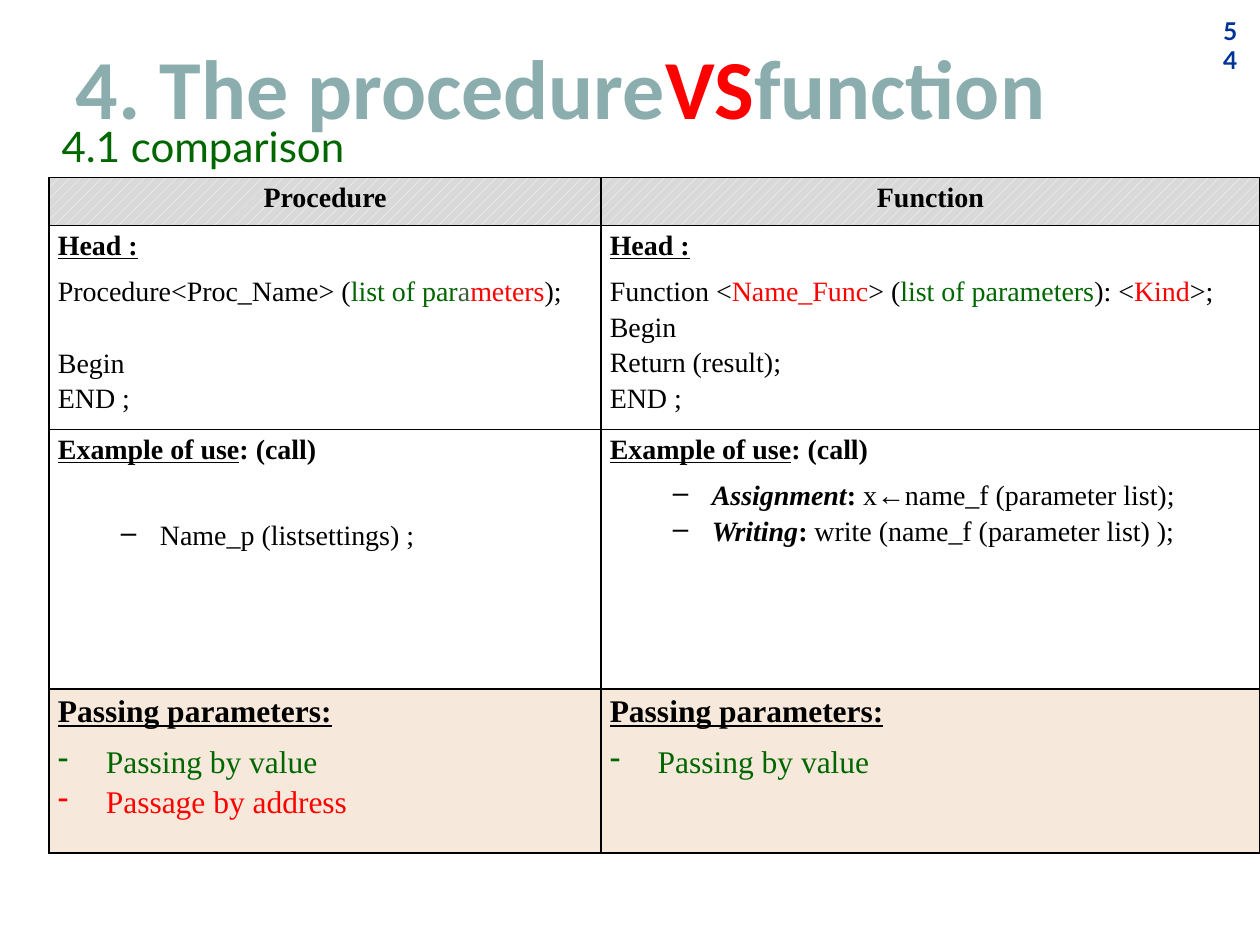
from dataclasses import dataclass

from lxml import etree
from pptx import Presentation
from pptx.dml.color import RGBColor
from pptx.enum import dml, text
from pptx.oxml import ns
from pptx.util import Inches, Pt

BLACK = RGBColor(0x00, 0x00, 0x00)
WHITE = RGBColor(0xFF, 0xFF, 0xFF)
RED = RGBColor(0xFF, 0x00, 0x00)
GREEN = RGBColor(0x00, 0x66, 0x00)
GREY_GREEN = RGBColor(0x43, 0x5E, 0x40)
TEAL = RGBColor(0x8C, 0xAD, 0xAE)
NAVY = RGBColor(0x00, 0x33, 0x99)
GREY = RGBColor(0xD9, 0xD9, 0xD9)
CREAM = RGBColor(0xF6, 0xE9, 0xDB)

SERIF = "Times New Roman"
COLUMN_WIDTHS = (4.38, 5.23)
ROW_HEIGHTS = (0.38, 1.62, 2.06, 1.3)


@dataclass
class Line:
    runs: list
    size: int = 16
    font_color: RGBColor = BLACK
    before: float = 0
    after: float = 0
    centred: bool = False
    bullet: str = ""
    level: int = 0
    margin: float = 0
    indent: float = 0


def heading(label, rest="", size=16):
    runs = [(label, "bu", None)]
    if rest:
        runs.append((rest, "b", None))
    return Line(runs, size, after=6)


def plain(words, before=0):
    return Line([(words, "", None)], before=before)


def call_item(runs, before=0):
    return Line(runs, before=before, bullet="–", level=1, margin=0.81, indent=-0.31)


def passing_item(words, font_color):
    return Line([(words, "", None)], 18, font_color, bullet="-", margin=0.38, indent=-0.38)


def column_title(words):
    return [Line([(words, "b", None)], after=6, centred=True)]


def table_content():
    by_value = passing_item("Passing by value", GREEN)
    passing = heading("Passing parameters:", size=18)
    head = heading("Head :")
    example = heading("Example of use", ": (call)")
    procedure_signature = Line([
        ("Procedure<Proc_Name> (", "", None), ("list of par", "", GREEN),
        ("a", "", GREY_GREEN), ("meters", "", RED), (");", "", None)])
    function_signature = Line([
        ("Function <", "", None), ("Name_Func", "", RED), ("> (", "", None),
        ("list of parameters", "", GREEN), ("): <", "", None),
        ("Kind", "", RED), (">;", "", None)])
    assignment = call_item([("Assignment", "bi", None), (": ", "b", None),
                            ("x←name_f (parameter list);", "", None)])
    writing = call_item([("Writing", "bi", None), (":", "b", None),
                         (" write (name_f (parameter list) );", "", None)])
    procedure_call = call_item([("Name_p (listsettings) ;", "", None)], before=23)
    return [
        [column_title("Procedure"), column_title("Function")],
        [[head, procedure_signature, plain("Begin", 20.5), plain("END ;")],
         [head, function_signature, plain("Begin"), plain("Return (result);"), plain("END ;")]],
        [[example, procedure_call], [example, assignment, writing]],
        [[passing, by_value, passing_item("Passage by address", RED)], [passing, by_value]],
    ]


def set_font(paragraph, name, size, font_color, bold=None):
    font = paragraph.font
    font.name = name
    font.size = Pt(size)
    font.color.rgb = font_color
    font.bold = bold


def add_run(paragraph, words, style="", font_color=None):
    run = paragraph.add_run()
    run.text = words
    if "b" in style:
        run.font.bold = True
    if "i" in style:
        run.font.italic = True
    if "u" in style:
        run.font.underline = True
    if font_color is not None:
        run.font.color.rgb = font_color


def add_bullet(paragraph, line):
    properties = paragraph._p.get_or_add_pPr()
    properties.set("marL", str(Inches(line.margin)))
    properties.set("indent", str(Inches(line.indent)))
    etree.SubElement(properties, ns.qn("a:buChar"), char=line.bullet)
    if line.level:
        tabs = etree.SubElement(properties, ns.qn("a:tabLst"))
        etree.SubElement(tabs, ns.qn("a:tab"), pos=str(Inches(0.28)), algn="l")


def write_line(paragraph, line):
    if line.bullet:
        add_bullet(paragraph, line)
    paragraph.level = line.level
    paragraph.line_spacing = 1.15
    paragraph.space_before = Pt(line.before)
    paragraph.space_after = Pt(line.after)
    if line.centred:
        paragraph.alignment = text.PP_ALIGN.CENTER
    set_font(paragraph, SERIF, line.size, line.font_color)
    for run in line.runs:
        add_run(paragraph, *run)


def add_borders(cell):
    properties = cell._tc.get_or_add_tcPr()
    for position, side in enumerate(("lnL", "lnR", "lnT", "lnB")):
        border = etree.Element(ns.qn(f"a:{side}"), w=str(Pt(1)))
        fill = etree.SubElement(border, ns.qn("a:solidFill"))
        etree.SubElement(fill, ns.qn("a:srgbClr"), val=str(BLACK))
        properties.insert(position, border)


def fill_cell(cell, row_index):
    if row_index == 0:
        cell.fill.patterned()
        cell.fill.pattern = dml.MSO_PATTERN.PERCENT_20
        cell.fill.fore_color.rgb = WHITE
        cell.fill.back_color.rgb = GREY
    elif row_index == 3:
        cell.fill.solid()
        cell.fill.fore_color.rgb = CREAM
    else:
        cell.fill.background()


def write_cell(cell, lines, row_index):
    cell.margin_left = cell.margin_right = Inches(0.07)
    cell.margin_top = cell.margin_bottom = 0
    fill_cell(cell, row_index)
    add_borders(cell)
    frame = cell.text_frame
    for index, line in enumerate(lines):
        write_line(frame.add_paragraph() if index else frame.paragraphs[0], line)


def add_comparison(slide):
    table = slide.shapes.add_table(
        len(ROW_HEIGHTS), len(COLUMN_WIDTHS), Inches(0.39), Inches(1.41),
        Inches(sum(COLUMN_WIDTHS)), Inches(sum(ROW_HEIGHTS))).table
    table.first_row = table.horz_banding = False
    for column, width in zip(table.columns, COLUMN_WIDTHS):
        column.width = Inches(width)
    for row_index, row_content in enumerate(table_content()):
        table.rows[row_index].height = Inches(ROW_HEIGHTS[row_index])
        for column_index, lines in enumerate(row_content):
            write_cell(table.cell(row_index, column_index), lines, row_index)


def add_title(slide):
    title = slide.shapes.title
    title.left, title.top = Inches(0.5), Inches(0.23)
    title.width, title.height = Inches(9.19), Inches(0.91)
    title.text_frame.vertical_anchor = text.MSO_ANCHOR.MIDDLE
    paragraph = title.text_frame.paragraphs[0]
    paragraph.alignment = text.PP_ALIGN.LEFT
    set_font(paragraph, "Calibri", 48, TEAL, True)
    for words, font_color in (("4. The procedure", None), ("VS", RED), ("function", None)):
        add_run(paragraph, words, font_color=font_color)


def add_label(slide, words, left, top, width, height, size, font_color, bold=False):
    box = slide.shapes.add_textbox(Inches(left), Inches(top), Inches(width), Inches(height))
    frame = box.text_frame
    frame.word_wrap = True
    frame.vertical_anchor = text.MSO_ANCHOR.MIDDLE
    set_font(frame.paragraphs[0], "Lato", size, font_color, bold)
    add_run(frame.paragraphs[0], words)


def main():
    presentation = Presentation()
    presentation.slide_width, presentation.slide_height = Inches(10), Inches(7.5)
    slide = presentation.slides.add_slide(presentation.slide_layouts[5])
    add_title(slide)
    add_label(slide, "54", 9.61, 0.19, 0.32, 0.34, 14, NAVY, True)
    add_label(slide, "4.1 comparison", 0.39, 0.9, 9.19, 0.51, 24, GREEN)
    add_comparison(slide)
    presentation.save("out.pptx")


if __name__ == "__main__":
    main()
